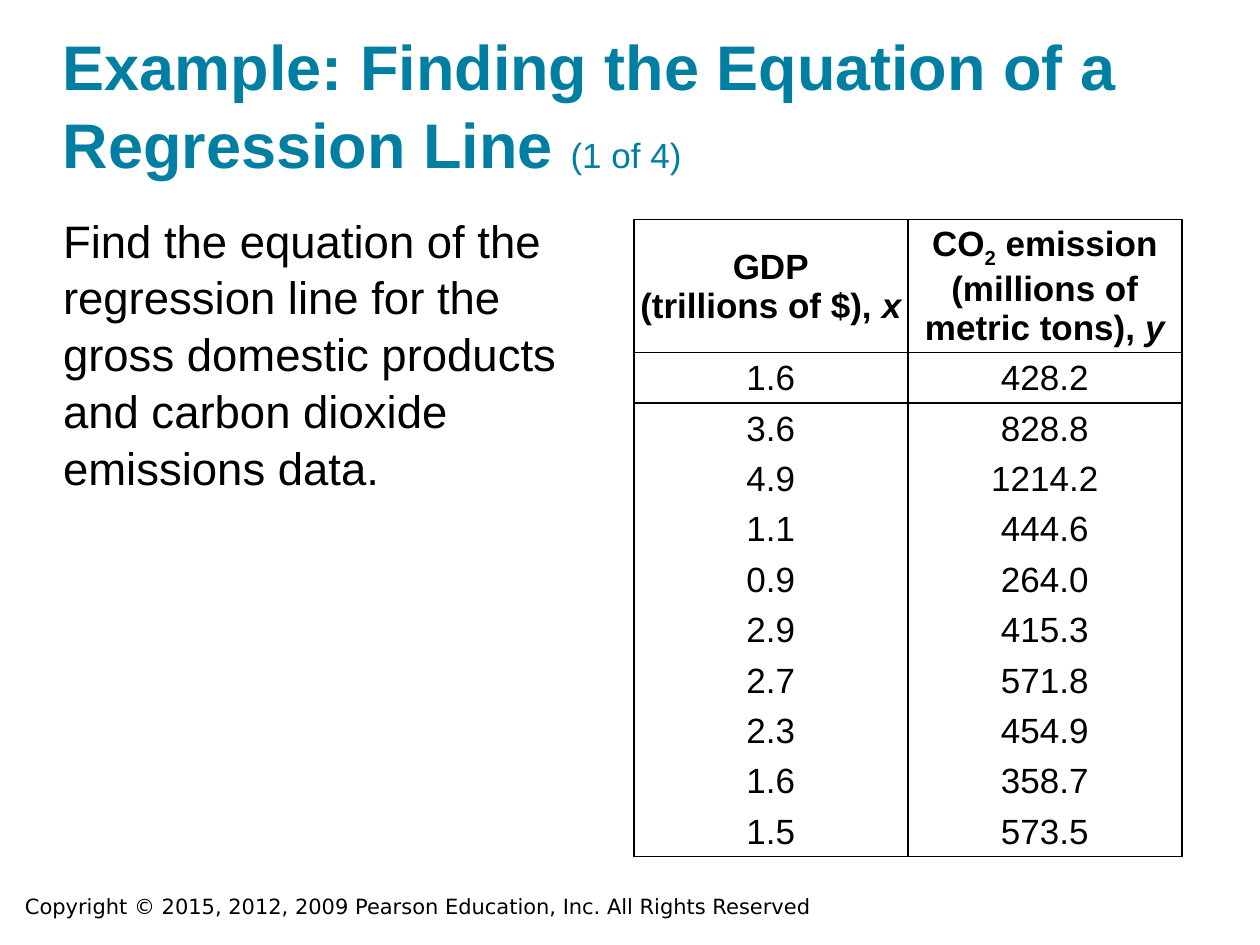
"""Build the regression line example slide with its GDP and emissions table."""
import lxml.etree
import pptx
import pptx.dml.color
import pptx.enum.text
import pptx.oxml.ns
import pptx.util

Inches = pptx.util.Inches
COLORS = {"title": "007FA3", "text": "000000", "header": "FFFFFF"}
NO_STYLE = "{2D5ABB26-0587-4C30-8999-92F81FD0307C}"
TITLE = {"name": "Arial", "size": pptx.util.Pt(36), "bold": True}
BODY = {"name": "Arial", "size": pptx.util.Pt(26)}
FOOTER = {"name": "DejaVu Sans", "size": pptx.util.Pt(12)}
VALUE = {"name": "Arial", "size": pptx.util.Pt(20), "bold": False}
HEADER = {**VALUE, "bold": True}
VARIABLE = {**HEADER, "italic": True}
HEADERS = [
    [[("GDP", HEADER)], [("(trillions of $), ", HEADER), ("x", VARIABLE)]],
    [[("CO", HEADER), ("2", {**HEADER, "baseline": -26000}),
      (" emission (millions of metric tons), ", HEADER), ("y", VARIABLE)]],
]
DATA = [
    ("1.6", "428.2"), ("3.6", "828.8"), ("4.9", "1214.2"), ("1.1", "444.6"),
    ("0.9", "264.0"), ("2.9", "415.3"), ("2.7", "571.8"), ("2.3", "454.9"),
    ("1.6", "358.7"), ("1.5", "573.5"),
]


def rgb(key):
    """Return the named colour."""
    return pptx.dml.color.RGBColor.from_string(COLORS[key])


def add_runs(paragraph, runs, color="text"):
    """Append formatted runs to a paragraph."""
    for text, formats in runs:
        run = paragraph.add_run()
        run.text = text
        run.font.color.rgb = rgb(color)
        for attribute, value in formats.items():
            if attribute == "baseline":
                run.font._element.set("baseline", str(value))
            else:
                setattr(run.font, attribute, value)


def add_text(slide, place, runs, color="text", spacing=None, frame_formats=None):
    """Add a wrapping text box holding one paragraph."""
    frame = slide.shapes.add_textbox(*map(Inches, place)).text_frame
    for attribute, value in {"word_wrap": True, **(frame_formats or {})}.items():
        setattr(frame, attribute, value)
    paragraph = frame.paragraphs[0]
    paragraph.line_spacing = spacing
    add_runs(paragraph, runs, color)


def draw_borders(cell, sides):
    """Draw one-point borders on the given sides of a cell."""
    properties = cell._tc.get_or_add_tcPr()
    for side in "LRTB":
        if side in sides:
            line = lxml.etree.SubElement(
                properties, pptx.oxml.ns.qn(f"a:ln{side}"), w=str(pptx.util.Pt(1)))
            fill = lxml.etree.SubElement(line, pptx.oxml.ns.qn("a:solidFill"))
            lxml.etree.SubElement(
                fill, pptx.oxml.ns.qn("a:srgbClr"), val=COLORS["text"])


def fill_cell(cell, paragraphs, sides, is_header):
    """Write centred paragraphs into a cell and set its borders and fill."""
    formats = {
        "vertical_anchor": pptx.enum.text.MSO_ANCHOR.MIDDLE,
        "margin_left": Inches(0.01), "margin_right": Inches(0.01),
        "margin_top": Inches(0.01), "margin_bottom": 0,
    }
    for attribute, value in formats.items():
        setattr(cell, attribute, value)
    frame = cell.text_frame
    for index, runs in enumerate(paragraphs):
        paragraph = frame.add_paragraph() if index else frame.paragraphs[0]
        paragraph.alignment = pptx.enum.text.PP_ALIGN.CENTER
        add_runs(paragraph, runs)
    draw_borders(cell, sides)
    if is_header:
        cell.fill.solid()
        cell.fill.fore_color.rgb = rgb("header")
    else:
        cell.fill.background()


def add_emissions_table(slide):
    """Add the table of GDP and carbon dioxide emissions."""
    rows = [HEADERS] + [[[[(value, VALUE)]] for value in pair] for pair in DATA]
    table = slide.shapes.add_table(
        len(rows), 2, *map(Inches, (5.03, 1.74, 4.35, 5.01))).table
    table._tbl.tblPr.find(pptx.oxml.ns.qn("a:tableStyleId")).text = NO_STYLE
    table.horz_banding = False
    for row_index, row in enumerate(rows):
        table.rows[row_index].height = Inches(0.4 if row_index else 1.05)
        sides = "LR"
        if row_index < 2:
            sides += "T"
        if row_index in (0, len(rows) - 1):
            sides += "B"
        for column_index, paragraphs in enumerate(row):
            cell = table.cell(row_index, column_index)
            fill_cell(cell, paragraphs, sides, row_index == 0)


def main():
    """Build and save the slide."""
    deck = pptx.Presentation()
    deck.slide_width, deck.slide_height = Inches(10), Inches(7.5)
    slide = deck.slides.add_slide(deck.slide_layouts[6])
    flush = {f"margin_{side}": 0 for side in ("left", "top", "right", "bottom")}
    add_text(slide, (0.1, 7.04, 7.83, 0.3), [
        ("Copyright © 2015, 2012, 2009 Pearson Education, Inc. All Rights Reserved",
         FOOTER)])
    add_text(slide, (0.5, 0.24, 9, 1.2), [
        ("Example: Finding the Equation of a Regression Line ", TITLE),
        ("(1 of 4)", {**TITLE, "size": pptx.util.Pt(20), "bold": False}),
    ], "title", 1.04, {
        **flush, "vertical_anchor": pptx.enum.text.MSO_ANCHOR.BOTTOM})
    add_text(slide, (0.5, 1.67, 4.25, 5.33), [
        ("Find the equation of the regression line for the gross domestic "
         "products and carbon dioxide emissions data.", BODY),
    ], spacing=1.04, frame_formats=flush)
    add_emissions_table(slide)
    deck.save("out.pptx")


if __name__ == "__main__":
    main()
